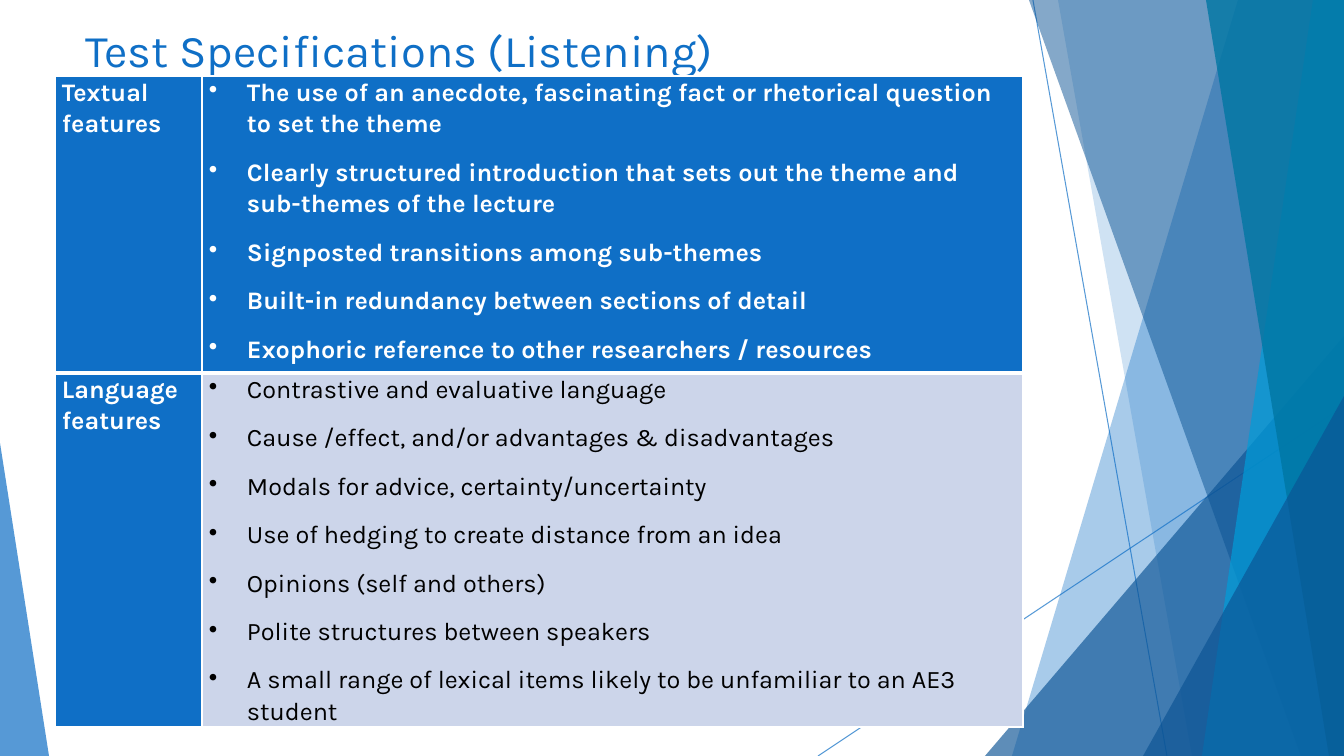
from lxml.etree import SubElement
from pptx import Presentation
from pptx.dml.color import RGBColor
from pptx.enum.shapes import MSO_CONNECTOR as Connector, MSO_SHAPE as Shape
from pptx.enum.text import MSO_ANCHOR as Anchor, MSO_AUTO_SIZE as AutoSize, PP_ALIGN as Align
from pptx.oxml.ns import qn
from pptx.util import Pt

WIDTH, HEIGHT = 1344, 756
SCALE = 12192000 / WIDTH
BLUE, NAVY, CYAN, TEAL = "0F6FC6", "0B5394", "009DD9", "0076A3"
WHITE, BLACK, PALE = "FFFFFF", "000000", "CCD5EA"

TEXTUAL = [
    "The use of an anecdote, fascinating fact or rhetorical question to set the theme",
    "Clearly structured introduction that sets out the theme and sub-themes of the lecture",
    "Signposted transitions among sub-themes",
    "Built-in redundancy between sections of detail",
    "Exophoric reference to other researchers / resources",
]
LANGUAGE = [
    "Contrastive and evaluative language",
    "Cause /effect, and/or advantages & disadvantages",
    "Modals for advice, certainty/uncertainty",
    "Use of hedging to create distance from an idea",
    "Opinions (self and others)",
    "Polite structures between speakers",
    "A small range of lexical items likely to be unfamiliar to an AE3 student",
]


def px(length):
    return round(length * SCALE)


def color(value):
    return RGBColor.from_string(value)


class SlideBuilder:
    """Draws styled elements on one slide, measured in px."""

    def __init__(self, deck, font):
        self.font = font
        self.page = deck.slides.add_slide(deck.slide_layouts[5])

    def fade(self, item, alpha):
        for tone in item.element.spPr.iter(qn("a:srgbClr")):
            SubElement(tone, qn("a:alpha")).set("val", str(alpha * 1000))

    def paint(self, shape, fill, alpha):
        shape.shadow.inherit = False
        shape.fill.solid()
        shape.fill.fore_color.rgb = color(fill)
        shape.line.fill.background()
        self.fade(shape, alpha)

    def line(self, x1, y1, x2, y2):
        line = self.page.shapes.add_connector(
            Connector.STRAIGHT, px(x1), px(y1), px(x2), px(y2))
        line.line.color.rgb = color(BLUE)
        line.line.width = Pt(0.75)
        self.fade(line, 70)
        SubElement(line.element.spPr, qn("a:effectLst"))

    def facet(self, top_x, bottom_x, fill, alpha):
        outline = self.page.shapes.build_freeform(px(top_x), 0)
        outline.add_line_segments([
            (px(WIDTH), 0), (px(WIDTH), px(HEIGHT)), (px(bottom_x), px(HEIGHT))])
        self.paint(outline.convert_to_shape(), fill, alpha)

    def triangle(self, left, top, width, apex, fill, alpha):
        shape = self.page.shapes.add_shape(
            Shape.ISOSCELES_TRIANGLE, px(left), px(top), px(width), px(HEIGHT - top))
        shape.adjustments[0] = apex
        self.paint(shape, fill, alpha)

    def span(self, para, text, size, tone, bold=False):
        span = para.add_run()
        span.text = text
        span.font.name = self.font
        span.font.size = Pt(size)
        span.font.bold = bold
        span.font.color.rgb = color(tone)

    def title(self, text, left, top, width, height):
        box = self.page.shapes.title
        box.left, box.top, box.width, box.height = map(px, (left, top, width, height))
        frame = box.text_frame
        frame.word_wrap = True
        frame.auto_size = AutoSize.NONE
        frame.vertical_anchor = Anchor.MIDDLE
        para = frame.paragraphs[0]
        para.alignment = Align.LEFT
        self.span(para, text, 32.4, BLUE)

    def cell(self, cell, texts, fill, tone, bold, bulleted, borders):
        cell.margin_left = cell.margin_right = px(7)
        cell.margin_top = cell.margin_bottom = 0
        properties = cell._tc.get_or_add_tcPr()
        for side, width in zip("LRTB", borders):
            edge = SubElement(properties, qn(f"a:ln{side}"), w=str(Pt(width)))
            SubElement(SubElement(edge, qn("a:solidFill")), qn("a:srgbClr"), val=WHITE)
        cell.fill.solid()
        cell.fill.fore_color.rgb = color(fill)
        frame = cell.text_frame
        for index, text in enumerate(texts):
            para = frame.add_paragraph() if index else frame.paragraphs[0]
            para.line_spacing = 1.07
            para.space_before = para.space_after = Pt(6)
            if bulleted:
                layout = para._p.get_or_add_pPr()
                layout.set("marL", str(px(38)))
                layout.set("indent", str(-px(38)))
                SubElement(layout, qn("a:buChar"), char="•")
            self.span(para, text, 18, tone, bold)

    def table(self, left, top, widths, heights, rows):
        table = self.page.shapes.add_table(
            len(heights), len(widths), px(left), px(top),
            px(sum(widths)), px(sum(heights))).table
        for column, width in zip(table.columns, widths):
            column.width = px(width)
        for row, height in zip(table.rows, heights):
            row.height = px(height)
        for index, (heading, points, fill, tone, bold, borders) in enumerate(rows):
            self.cell(table.cell(index, 0), [heading], BLUE, WHITE, True, False, borders)
            self.cell(table.cell(index, 1), points, fill, tone, bold, True, borders)


def main():
    deck = Presentation()
    deck.slide_width, deck.slide_height = px(WIDTH), px(HEIGHT)
    slide = SlideBuilder(deck, "Karla")

    slide.line(1033, 0, 1167, HEIGHT)
    slide.line(WIDTH, 406, 818, HEIGHT)
    slide.facet(1238, 1012, BLUE, 36)
    slide.facet(1058, 1192, BLUE, 20)
    slide.triangle(985, 336, 359, 1, NAVY, 66)
    slide.facet(1029, 1301, NAVY, 50)
    slide.facet(1313, 1202, CYAN, 70)
    slide.facet(1206, 1329, TEAL, 80)
    slide.triangle(1143, 396, 201, 1, NAVY, 66)
    slide.triangle(0, 443, 49, 0, BLUE, 70)

    slide.title("Test Specifications (Listening)", 75, 15, 948, 68)
    slide.table(55, 76, [147, 821], [297, 353], [
        ("Textual features", TEXTUAL, BLUE, WHITE, True, (1, 1, 1, 3)),
        ("Language features", LANGUAGE, PALE, BLACK, False, (1, 1, 3, 1)),
    ])
    deck.save("out.pptx")


if __name__ == "__main__":
    main()
